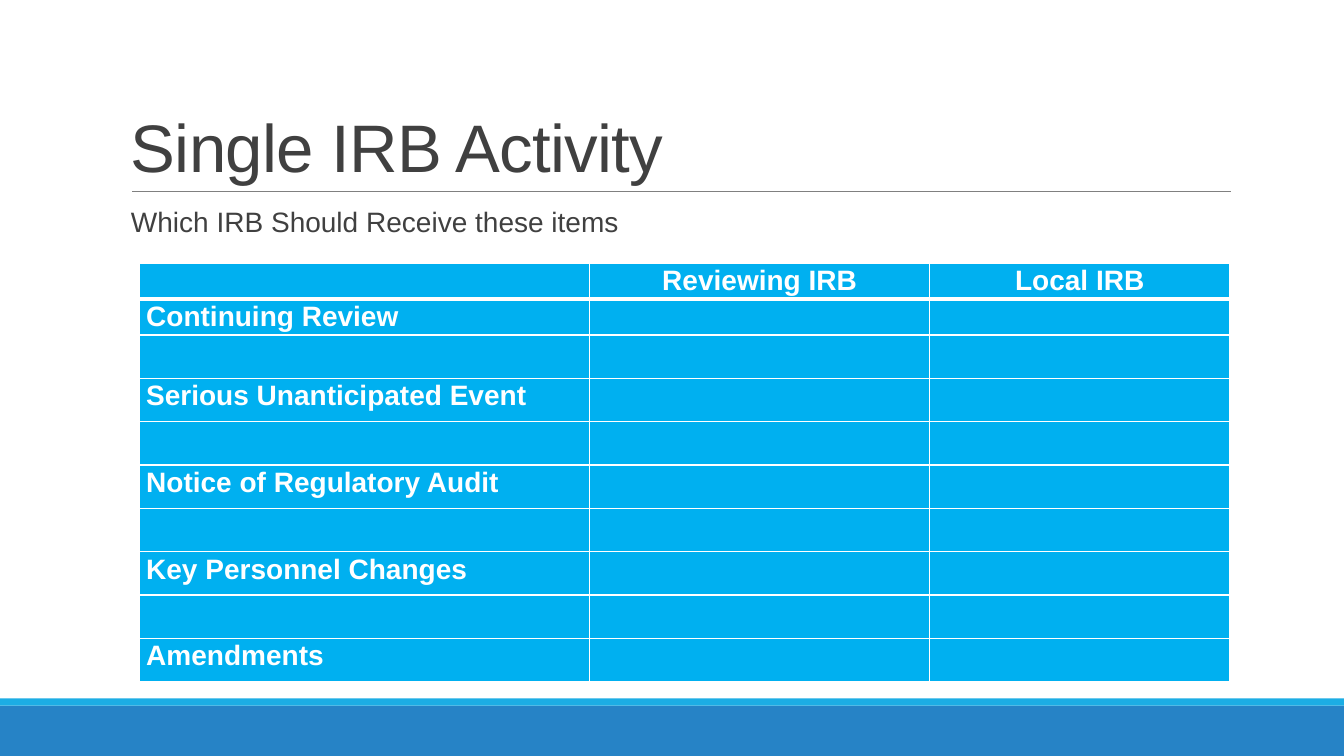
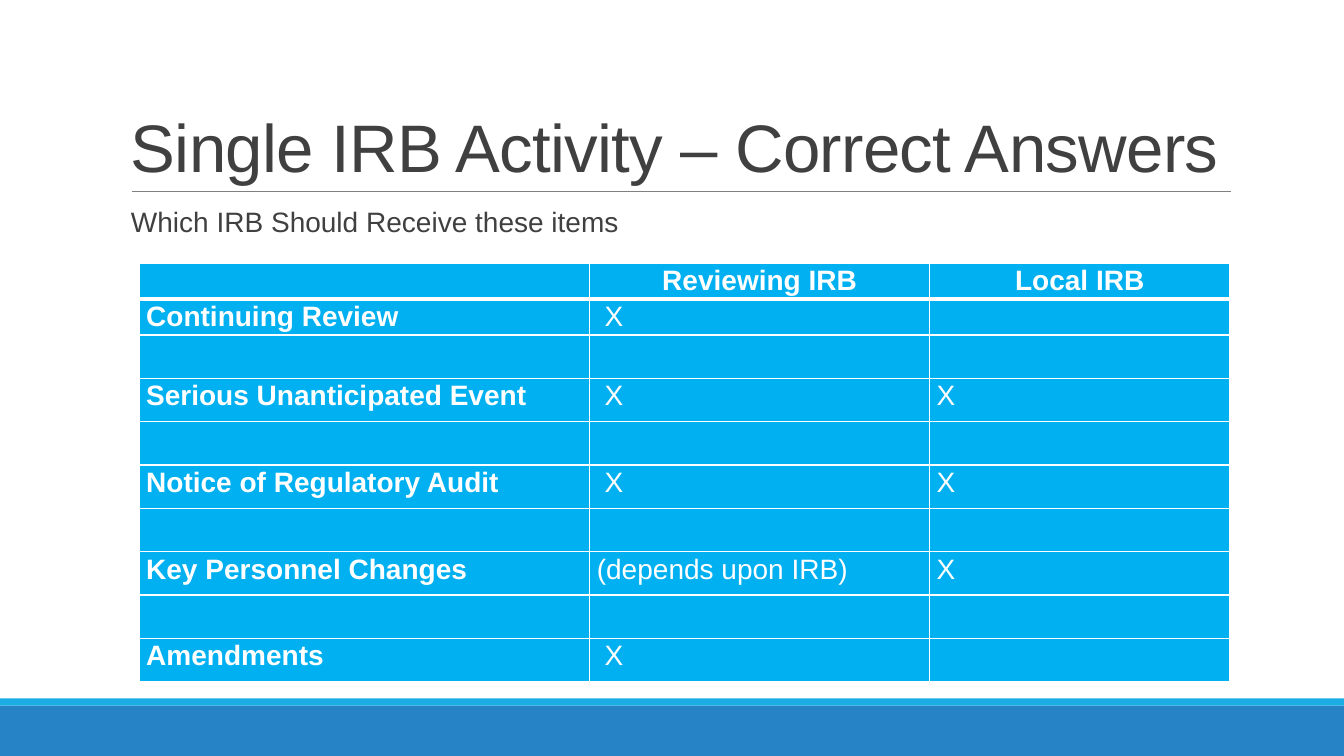
"""Build the two Single IRB Activity slides: the exercise and its answers."""
from dataclasses import dataclass
from typing import NamedTuple

from lxml import etree
from pptx import Presentation
from pptx.dml.color import RGBColor
from pptx.enum.shapes import MSO_CONNECTOR, MSO_SHAPE
from pptx.enum.text import MSO_ANCHOR, PP_ALIGN
from pptx.oxml.ns import qn
from pptx.slide import Slide
from pptx.table import _Cell
from pptx.text.text import _Paragraph
from pptx.util import Inches, Pt

RECTANGLE = MSO_SHAPE.RECTANGLE
STRAIGHT = MSO_CONNECTOR.STRAIGHT
TOP, BOTTOM = MSO_ANCHOR.TOP, MSO_ANCHOR.BOTTOM
LEFT, CENTER = PP_ALIGN.LEFT, PP_ALIGN.CENTER


@dataclass(frozen=True)
class Theme:
    font: str = "Arial"
    text: str = "404040"
    rule: str = "808080"
    white: str = "FFFFFF"
    cell: str = "00B0F0"
    footer: str = "2683C6"
    accent: str = "1CADE4"
    title_size: int = 48
    body_size: int = 20
    title_spacing: float = -0.5
    border: int = 1
    header_border: int = 3


class Band(NamedTuple):
    top: float
    height: float
    color: str


class TextBlock(NamedTuple):
    top: float
    height: float
    size: int
    line_spacing: float
    anchor: MSO_ANCHOR
    character_spacing: float = 0


class Answer(NamedTuple):
    item: str
    reviewing: str = ""
    local: str = ""


class ActivitySlide(NamedTuple):
    title: str
    show_answers: bool


THEME = Theme()
WIDTH, HEIGHT = 13.33, 7.5
BANDS = (Band(7, 0.5, THEME.footer), Band(6.93, 0.07, THEME.accent))
TITLE = TextBlock(0.31, 1.59, THEME.title_size, 0.85, BOTTOM, THEME.title_spacing)
PROMPT = TextBlock(2.02, 0.5, THEME.body_size, 0.9, TOP)
PROMPT_TEXT = "Which IRB Should Receive these items"
HEADER = ("", "Reviewing IRB", "Local IRB")
ANSWERS = (
    Answer("Continuing Review", " X"),
    Answer("Serious Unanticipated Event", " X", "X"),
    Answer("Notice of Regulatory Audit", " X", "X"),
    Answer("Key Personnel Changes", "(depends upon IRB)", "X"),
    Answer("Amendments", " X"),
)
SLIDES = (
    ActivitySlide("Single IRB Activity", False),
    ActivitySlide("Single IRB Activity – Correct Answers", True),
)
TABLE_LEFT, TABLE_TOP = 1.38, 2.61
COLUMN_WIDTHS = (4.47, 3.37, 2.98)
SHORT_ROW, TALL_ROW = 0.34, 0.43
SHORT_ROWS = 2


def style_paragraph(paragraph: _Paragraph, size: int, color: str, spacing: float,
                    bold: bool = False, align: PP_ALIGN = LEFT) -> None:
    """Set the font, line spacing and alignment of a paragraph."""
    paragraph.line_spacing = spacing
    paragraph.alignment = align
    font = paragraph.font
    font.name, font.size, font.bold = THEME.font, Pt(size), bold
    font.color.rgb = RGBColor.from_string(color)


def add_text(slide: Slide, text: str, block: TextBlock) -> None:
    """Add one line of slide text in the shared text column."""
    shape = slide.shapes.add_textbox(Inches(1.2), Inches(block.top), Inches(11), Inches(block.height))
    frame = shape.text_frame
    frame.word_wrap = True
    frame.vertical_anchor = block.anchor
    paragraph = frame.paragraphs[0]
    run = paragraph.add_run()
    run.text = text
    style_paragraph(paragraph, block.size, THEME.text, block.line_spacing)
    if block.character_spacing:
        run.font._element.set("spc", str(int(block.character_spacing * 100)))


def add_frame(slide: Slide) -> None:
    """Draw the footer bands and the rule under the title."""
    for band in BANDS:
        shape = slide.shapes.add_shape(RECTANGLE, 0, Inches(band.top), Inches(WIDTH), Inches(band.height))
        shape.shadow.inherit = False
        shape.fill.solid()
        shape.fill.fore_color.rgb = RGBColor.from_string(band.color)
        shape.line.fill.background()
    rule = slide.shapes.add_connector(STRAIGHT, Inches(1.31), Inches(1.9), Inches(12.21), Inches(1.9))
    rule.line.color.rgb = RGBColor.from_string(THEME.rule)
    rule.line.width = Pt(0.5)
    etree.SubElement(rule._element.spPr, qn("a:effectLst"))


def set_borders(cell: _Cell, top: int, bottom: int) -> None:
    """Draw white borders around a cell."""
    properties = cell._tc.get_or_add_tcPr()
    widths = {"lnL": THEME.border, "lnR": THEME.border, "lnT": top, "lnB": bottom}
    for tag, width in widths.items():
        line = etree.SubElement(properties, qn(f"a:{tag}"), w=str(Pt(width)))
        fill = etree.SubElement(line, qn("a:solidFill"))
        etree.SubElement(fill, qn("a:srgbClr"), val=THEME.white)


def fill_cell(cell: _Cell, text: str, row: int, column: int) -> None:
    """Write and style one table cell by its place in the table."""
    set_borders(cell,
                THEME.header_border if row == 1 else THEME.border,
                THEME.header_border if row == 0 else THEME.border)
    cell.fill.solid()
    cell.fill.fore_color.rgb = RGBColor.from_string(THEME.cell)
    cell.margin_left = cell.margin_right = Inches(0.07)
    cell.margin_top = cell.margin_bottom = 0
    cell.text = text
    style_paragraph(cell.text_frame.paragraphs[0], THEME.body_size, THEME.white, 1.07,
                    bold=row == 0 or column == 0, align=CENTER if row == 0 else LEFT)


def table_rows(show_answers: bool) -> list[tuple[str, ...]]:
    """List the header and the items, with an empty row between items."""
    rows: list[tuple[str, ...]] = [HEADER]
    for index, answer in enumerate(ANSWERS):
        if index:
            rows.append(Answer(""))
        rows.append(answer if show_answers else Answer(answer.item))
    return rows


def add_activity_table(slide: Slide, show_answers: bool) -> None:
    """Add the table of items and the boards that receive them."""
    rows = table_rows(show_answers)
    heights = [SHORT_ROW if index < SHORT_ROWS else TALL_ROW for index in range(len(rows))]
    table = slide.shapes.add_table(
        len(rows), len(COLUMN_WIDTHS), Inches(TABLE_LEFT), Inches(TABLE_TOP),
        Inches(sum(COLUMN_WIDTHS)), Inches(sum(heights))).table
    for column, width in zip(table.columns, COLUMN_WIDTHS):
        column.width = Inches(width)
    for row_index, (texts, height) in enumerate(zip(rows, heights)):
        table.rows[row_index].height = Inches(height)
        for column_index, text in enumerate(texts):
            fill_cell(table.cell(row_index, column_index), text, row_index, column_index)


def main() -> None:
    """Build and save the presentation."""
    presentation = Presentation()
    presentation.slide_width, presentation.slide_height = Inches(WIDTH), Inches(HEIGHT)
    for content in SLIDES:
        slide = presentation.slides.add_slide(presentation.slide_layouts[6])
        add_frame(slide)
        add_text(slide, content.title, TITLE)
        add_text(slide, PROMPT_TEXT, PROMPT)
        add_activity_table(slide, content.show_answers)
    presentation.save("out.pptx")


if __name__ == "__main__":
    main()
